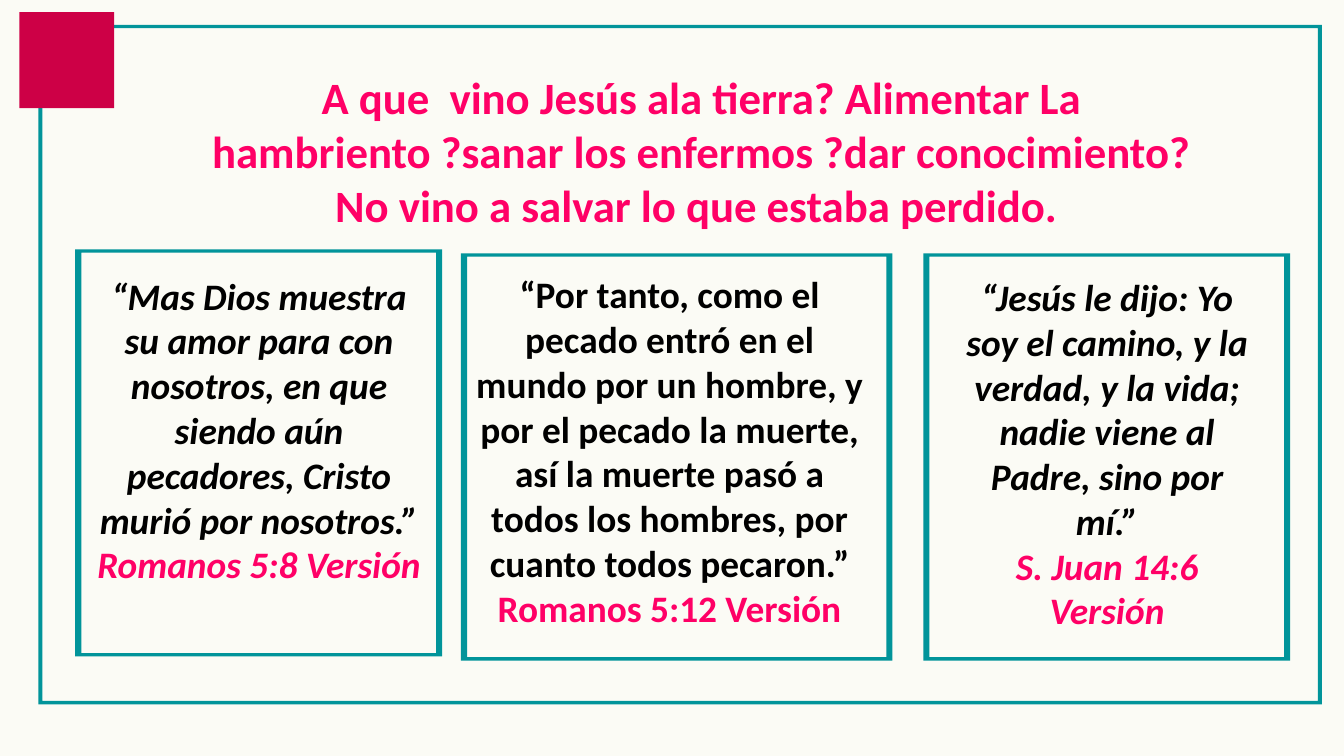
"""Build a slide with a question as its title and three framed Bible quotes."""
from pptx import Presentation
from pptx.dml.color import RGBColor
from pptx.enum.shapes import MSO_SHAPE
from pptx.enum.text import MSO_ANCHOR, MSO_AUTO_SIZE, PP_ALIGN
from pptx.util import Inches, Pt

RECTANGLE = MSO_SHAPE.RECTANGLE
TOP = MSO_ANCHOR.TOP
NO_AUTOSIZE = MSO_AUTO_SIZE.NONE
CENTER = PP_ALIGN.CENTER

CREAM = RGBColor(0xFB, 0xFB, 0xF5)
TEAL = RGBColor(0x01, 0x94, 0x9A)
CRIMSON = RGBColor(0xCD, 0x00, 0x46)
PINK = RGBColor(0xFF, 0x00, 0x66)
BLACK = RGBColor(0, 0, 0)

TITLE = ("A que\u00a0 vino Jesús ala tierra? Alimentar La hambriento ?sanar los enfermos "
         "?dar conocimiento? No vino a salvar lo que estaba perdido. ")
TITLE_BOX = (2.83, 0.99, 15.22, 2.53)
OUTER_FRAME = (0.57, 0.37, 19.1, 10.11)
OUTER_BORDER = (0.06, 0.05)
CARD_BORDER = (0.09, 0.05)
CORNER_SQUARE = (0.29, 0.18, 1.41, 1.43)

CARDS = [
    {"frame": (1.12, 3.71, 5.46, 6.06), "text_box": (1.28, 4.01, 5.15, 5.79), "italic": True,
     "quote": "“Mas Dios muestra su amor para con nosotros, en que siendo aún pecadores, "
              "Cristo murió por nosotros.”",
     "reference": "Romanos 5:8 Versión"},
    {"frame": (6.86, 3.77, 6.42, 6.06), "text_box": (6.9, 3.99, 6.13, 5.49), "italic": False,
     "quote": "“Por tanto, como el pecado entró en el mundo por un hombre, y por el pecado "
              "la muerte, así la muerte pasó a todos los hombres, por cuanto todos pecaron.”",
     "reference": "Romanos 5:12 Versión"},
    {"frame": (13.74, 3.77, 5.46, 6.06), "text_box": (14.14, 4.03, 4.67, 5.79), "italic": True,
     "quote": "“Jesús le dijo: Yo soy el camino, y la verdad, y la vida; nadie viene al "
              "Padre, sino por mí.”",
     "reference": "S. Juan 14:6 Versión"},
]


def paint(shape, color):
    shape.shadow.inherit = False
    shape.fill.solid()
    shape.fill.fore_color.rgb = color
    shape.line.fill.background()


def add_frame(slide, box, border):
    left, top, width, height = map(Inches, box)
    side, edge = map(Inches, border)
    right, bottom = left + width, top + height
    builder = slide.shapes.build_freeform(left, top)
    builder.add_line_segments([(left, bottom), (right, bottom), (right, top)])
    builder.move_to(left + side, top + edge)
    builder.add_line_segments([(right - side, top + edge), (right - side, bottom - edge),
                               (left + side, bottom - edge)])
    paint(builder.convert_to_shape(), TEAL)


def prepare_paragraph(shape):
    frame = shape.text_frame
    settings = {"word_wrap": True, "auto_size": NO_AUTOSIZE, "vertical_anchor": TOP}
    for name, value in settings.items():
        setattr(frame, name, value)
    paragraph = frame.paragraphs[0]
    paragraph.alignment = CENTER
    return paragraph


def add_run(paragraph, text, size, color, italic=False):
    run = paragraph.add_run()
    run.text = text
    settings = {"name": "Calibri", "size": Pt(size), "bold": True, "italic": italic}
    for name, value in settings.items():
        setattr(run.font, name, value)
    run.font.color.rgb = color


def add_title(slide):
    title = slide.shapes.title
    for name, value in zip(("left", "top", "width", "height"), TITLE_BOX):
        setattr(title, name, Inches(value))
    add_run(prepare_paragraph(title), TITLE, 48, PINK)


def add_card(slide, card):
    add_frame(slide, card["frame"], CARD_BORDER)
    text_box = slide.shapes.add_textbox(*map(Inches, card["text_box"]))
    paragraph = prepare_paragraph(text_box)
    add_run(paragraph, card["quote"], 40, BLACK, card["italic"])
    paragraph.add_line_break()
    add_run(paragraph, card["reference"], 40, PINK, card["italic"])


def main():
    presentation = Presentation()
    presentation.slide_width, presentation.slide_height = Inches(20), Inches(11.25)
    slide = presentation.slides.add_slide(presentation.slide_layouts.get_by_name("Title Only"))
    slide.background.fill.solid()
    slide.background.fill.fore_color.rgb = CREAM
    add_frame(slide, OUTER_FRAME, OUTER_BORDER)
    paint(slide.shapes.add_shape(RECTANGLE, *map(Inches, CORNER_SQUARE)), CRIMSON)
    add_title(slide)
    for card in CARDS:
        add_card(slide, card)
    presentation.save("out.pptx")


if __name__ == "__main__":
    main()
